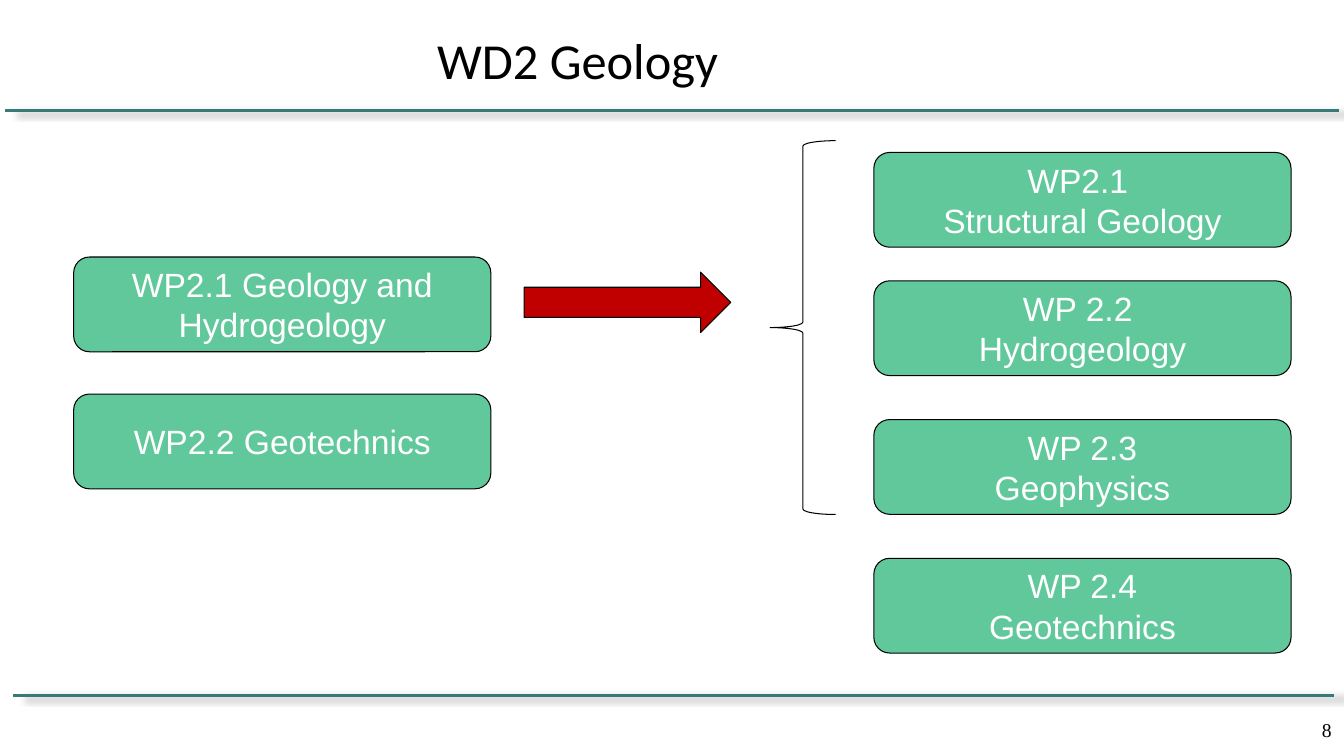
import dataclasses

import lxml.etree
import pptx
import pptx.dml.color
import pptx.enum.shapes
import pptx.enum.text
import pptx.oxml.ns
import pptx.util

Pt = pptx.util.Pt
RGB = pptx.dml.color.RGBColor.from_string
Shapes = pptx.enum.shapes.MSO_SHAPE
Align = pptx.enum.text.PP_ALIGN
Anchor = pptx.enum.text.MSO_ANCHOR


@dataclasses.dataclass(frozen=True)
class Theme:
    ink: str = "000000"
    rule: str = "367B77"
    shadow: str = "808080"
    package_fill: str = "60C89B"
    package_text: str = "FFFFFF"
    arrow_fill: str = "C00000"
    title_size: float = 36
    package_size: float = 24
    number_size: float = 14


@dataclasses.dataclass(frozen=True)
class Box:
    left: float
    top: float
    width: float
    height: float


@dataclasses.dataclass(frozen=True)
class WorkPackage:
    left: float
    top: float
    lines: tuple[str, ...]


@dataclasses.dataclass(frozen=True)
class Rule:
    start: float
    end: float
    y: float


THEME = Theme()
PACKAGE_WIDTH, PACKAGE_HEIGHT = 298, 67.7
OLD_LEFT, NEW_LEFT = 52.6, 624.2

PACKAGES = [
    WorkPackage(NEW_LEFT, 108.9, ("WP2.1 ", "Structural Geology")),
    WorkPackage(NEW_LEFT, 200.6, ("WP 2.2 ", "Hydrogeology")),
    WorkPackage(NEW_LEFT, 299.7, ("WP 2.3", "Geophysics")),
    WorkPackage(NEW_LEFT, 398.8, ("WP 2.4", "Geotechnics")),
    WorkPackage(OLD_LEFT, 183.6, ("WP2.1 Geology and Hydrogeology",)),
    WorkPackage(OLD_LEFT, 281.5, ("WP2.2 Geotechnics",)),
]
RULES = [Rule(956.2, 3.6, 79.2), Rule(952.6, 9.4, 496.8)]


def place(shape, box: Box) -> None:
    for name, value in dataclasses.asdict(box).items():
        setattr(shape, name, Pt(value))


def write(shape, lines: tuple[str, ...], font: str, size: float, color: str,
          alignment, anchor, line_spacing: float | None = None) -> None:
    frame = shape.text_frame
    frame_format = {
        "word_wrap": True, "vertical_anchor": anchor,
        "margin_left": Pt(7.2), "margin_right": Pt(7.2),
        "margin_top": Pt(3.6), "margin_bottom": Pt(3.6),
    }
    for name, value in frame_format.items():
        setattr(frame, name, value)
    frame.text = "\n".join(lines)
    for paragraph in frame.paragraphs:
        paragraph.alignment = alignment
        if line_spacing:
            paragraph.line_spacing = line_spacing
        for name, value in {"name": font, "size": Pt(size)}.items():
            setattr(paragraph.font, name, value)
        paragraph.font.color.rgb = RGB(color)


def add_outlined(slide, kind, box: Box, fill: str | None = None):
    shape = slide.shapes.add_shape(kind, 0, 0, 0, 0)
    place(shape, box)
    shape.shadow.inherit = False
    if fill:
        shape.fill.solid()
        shape.fill.fore_color.rgb = RGB(fill)
    else:
        shape.fill.background()
    shape.line.color.rgb = RGB(THEME.ink)
    shape.line.width = Pt(0.75)
    return shape


def add_rule(slide, rule: Rule) -> None:
    line = slide.shapes.add_connector(
        pptx.enum.shapes.MSO_CONNECTOR.STRAIGHT,
        Pt(rule.start), Pt(rule.y), Pt(rule.end), Pt(rule.y))
    line.line.color.rgb = RGB(THEME.rule)
    line.line.width = Pt(2)
    # Soft shadow below the rule
    qn = pptx.oxml.ns.qn
    effects = lxml.etree.SubElement(line._element.spPr, qn("a:effectLst"))
    shadow = lxml.etree.SubElement(
        effects, qn("a:outerShdw"), blurRad=str(Pt(5)), dist=str(Pt(8.7)),
        dir=str(13 * 60000), algn="ctr", rotWithShape="0")
    color = lxml.etree.SubElement(shadow, qn("a:srgbClr"), val=THEME.shadow)
    lxml.etree.SubElement(color, qn("a:alpha"), val="44000")


def add_package(slide, package: WorkPackage) -> None:
    box = Box(package.left, package.top, PACKAGE_WIDTH, PACKAGE_HEIGHT)
    shape = add_outlined(slide, Shapes.ROUNDED_RECTANGLE, box,
                         THEME.package_fill)
    write(shape, package.lines, "Arial", THEME.package_size,
          THEME.package_text, Align.CENTER, Anchor.MIDDLE)


def main() -> None:
    presentation = pptx.Presentation()
    presentation.slide_width, presentation.slide_height = Pt(960), Pt(540)
    slide = presentation.slides.add_slide(presentation.slide_layouts[5])

    # Rules, title and slide number
    for rule in RULES:
        add_rule(slide, rule)
    title = slide.shapes.title
    place(title, Box(52.6, 5, 720, 74.2))
    write(title, ("WD2 Geology",), "Calibri", THEME.title_size, THEME.ink,
          Align.CENTER, Anchor.MIDDLE)
    number = slide.shapes.add_textbox(0, 0, 0, 0)
    place(number, Box(773.3, 496.1, 185, 37.4))
    write(number, ("8",), "Times New Roman", THEME.number_size, THEME.ink,
          Align.RIGHT, Anchor.BOTTOM, 0.93)

    # Work packages before and after the split
    for package in PACKAGES:
        add_package(slide, package)

    # Brace and arrow between them
    add_outlined(slide, Shapes.LEFT_BRACE, Box(550.1, 100.5, 46.8, 267))
    add_outlined(slide, Shapes.RIGHT_ARROW, Box(374.4, 194.4, 147.6, 43.2),
                 THEME.arrow_fill)

    presentation.save("out.pptx")


if __name__ == "__main__":
    main()
